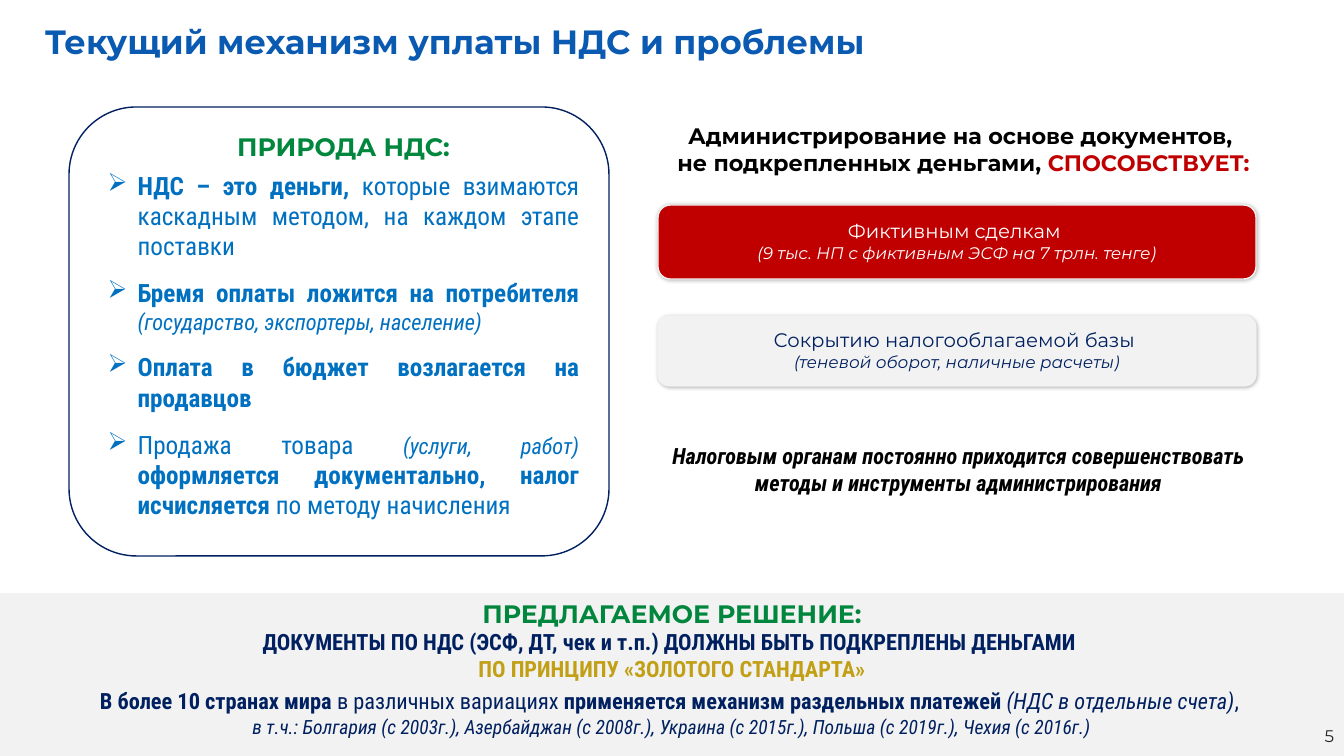
from lxml import etree
from pptx import Presentation
from pptx.dml.color import RGBColor
from pptx.enum.shapes import MSO_SHAPE
from pptx.enum.text import MSO_ANCHOR, PP_ALIGN
from pptx.oxml.ns import qn
from pptx.util import Pt

LEFT, MID, RIGHT, FULL = (PP_ALIGN.LEFT, PP_ALIGN.CENTER,
                          PP_ALIGN.RIGHT, PP_ALIGN.JUSTIFY)
TOP, CENTER = MSO_ANCHOR.TOP, MSO_ANCHOR.MIDDLE
RECT, ROUND = MSO_SHAPE.RECTANGLE, MSO_SHAPE.ROUNDED_RECTANGLE

PX = 914400 / 100.8
WIDE, HIGH = 1344, 756
MONT, ROBO = "Montserrat", "Roboto Condensed"
BLACK, WHITE, GREY, DARK = "000000", "FFFFFF", "F2F2F2", "262626"
NAVY, BLUE, SKY = "002060", "0B5AB2", "0070C0"
RED, GREEN, GOLD = "C00000", "00863D", "C1A015"

# Run style: font, size, colour, flags (b = bold, i = italic)
TITLE = (MONT, 24, BLUE, "b")
HEAD = (MONT, 18, GREEN, "b")
LEAD, ALERT = (MONT, 16, BLACK, "b"), (MONT, 16, RED, "b")
NOTE = (ROBO, 16, BLACK, "bi")
PAGE = (MONT, 12, DARK, "")
SKY_B, SKY_N, SKY_I = (ROBO, 18, SKY, "b"), (ROBO, 18, SKY, ""), (ROBO, 16, SKY, "i")
NAVY_B, NAVY_N, NAVY_I = (ROBO, 16, NAVY, "b"), (ROBO, 16, NAVY, ""), (ROBO, 16, NAVY, "i")
GOLD_B, SMALL_I = (ROBO, 16, GOLD, "b"), (ROBO, 14, NAVY, "i")

# Each text is a list of paragraphs, each paragraph a list of runs
HEADING = [[("Текущий механизм уплаты НДС и проблемы", TITLE)]]
CLAIM = [
    [("Администрирование на основе документов, ", LEAD)],
    [("не подкрепленных деньгами, ", LEAD), ("СПОСОБСТВУЕТ:", ALERT)],
]
EFFECTS = [  # top, height, fill, text colour, main line, detail
    (205, 74, RED, WHITE, "Фиктивным сделкам ",
     "(9 тыс. НП с фиктивным ЭСФ на 7 трлн. тенге)"),
    (316, 70, GREY, NAVY, "Сокрытию налогооблагаемой базы ",
     "(теневой оборот, наличные расчеты)"),
]
REMARK = [[("Налоговым органам постоянно приходится совершенствовать "
            "методы и инструменты администрирования", NOTE)]]
NATURE = [
    [("ПРИРОДА НДС:", HEAD)],
    [("НДС – это деньги, ", SKY_B),
     ("которые взимаются каскадным методом, на каждом этапе поставки", SKY_N)],
    [("Бремя оплаты ложится на потребителя ", SKY_B),
     ("(государство, экспортеры, население)", SKY_I)],
    [("Оплата в бюджет возлагается на продавцов", SKY_B)],
    [("Продажа товара ", SKY_N), ("(услуги, работ)", SKY_I), (" ", SKY_N),
     ("оформляется документально, налог исчисляется ", SKY_B),
     ("по методу начисления", SKY_N)],
]
ANSWER = [
    [("ПРЕДЛАГАЕМОЕ РЕШЕНИЕ:", HEAD)],
    [("ДОКУМЕНТЫ ПО НДС (ЭСФ, ДТ, чек и т.п.) ДОЛЖНЫ БЫТЬ ПОДКРЕПЛЕНЫ ДЕНЬГАМИ \n", NAVY_B),
     ("ПО ПРИНЦИПУ «ЗОЛОТОГО СТАНДАРТА»", GOLD_B)],
    [("В более 10 странах мира ", NAVY_B), ("в различных вариациях ", NAVY_N),
     ("применяется механизм раздельных платежей ", NAVY_B),
     ("(НДС в отдельные счета)", NAVY_I), (", \n", NAVY_N),
     ("в т.ч.: Болгария (с 2003г.), Азербайджан (с 2008г.), Украина (с 2015г.), "
      "Польша (с 2019г.), Чехия (с 2016г.)", SMALL_I)],
]


def px(n):
    return round(n * PX)


def color(code):
    return RGBColor.from_string(code)


def write(shape, paras, align, anchor=TOP):
    frame = shape.text_frame
    frame.word_wrap = True
    frame.vertical_anchor = anchor
    for i, runs in enumerate(paras):
        para = frame.paragraphs[0] if i == 0 else frame.add_paragraph()
        para.alignment = align
        for text, (face, size, ink, flags) in runs:
            run = para.add_run()
            run.text = text.rstrip("\n")
            font = run.font
            font.name, font.size = face, Pt(size)
            font.color.rgb = color(ink)
            font.bold, font.italic = "b" in flags, "i" in flags
            if text.endswith("\n"):
                para.add_line_break()
    return frame


def label(slide, box, paras, align, anchor=TOP):
    return write(slide.shapes.add_textbox(*map(px, box)), paras, align, anchor)


def block(slide, kind, box, fill=None, line=None):
    shape = slide.shapes.add_shape(kind, *map(px, box))
    shape.shadow.inherit = False
    if fill:
        shape.fill.solid()
        shape.fill.fore_color.rgb = color(fill)
    else:
        shape.fill.background()
    if line:
        shape.line.color.rgb = color(line)
        shape.line.width = Pt(1)
    else:
        shape.line.fill.background()
    return shape


def indent(para, left, first=0, mark=None):
    props = para._p.get_or_add_pPr()
    props.set("marL", str(px(left)))
    props.set("indent", str(px(first)))
    if mark:
        etree.SubElement(props, qn("a:buChar")).set("char", mark)


def glow(shape):
    """Add a soft shadow on all sides."""
    effects = shape._element.spPr.find(qn("a:effectLst"))
    outer = etree.SubElement(effects, qn("a:outerShdw"), blurRad=str(Pt(3)),
                             dist="0", dir="0", rotWithShape="0")
    ink = etree.SubElement(outer, qn("a:srgbClr"), val=BLACK)
    etree.SubElement(ink, qn("a:alpha"), val="29000")


def effect(slide, top, high, fill, ink, main, detail):
    shape = block(slide, ROUND, (658, top, 598, high), fill, GREY)
    glow(shape)
    lines = [[(main, (MONT, 14, ink, ""))], [(detail, (MONT, 12, ink, "i"))]]
    frame = write(shape, lines, MID, CENTER)
    frame.margin_left = frame.margin_right = px(25)
    frame.margin_top = frame.margin_bottom = px(22)
    for para in frame.paragraphs:
        para.line_spacing = Pt(15)


def nature(slide):
    shape = block(slide, ROUND, (69, 107, 540, 449), line=NAVY)
    shape.adjustments[0] = 0.15
    head, *points = write(shape, NATURE, FULL).paragraphs
    head.alignment = MID
    head.space_after = Pt(6)
    indent(head, 9)
    for point in points:
        point.space_after = Pt(12)
        indent(point, 39, -30, "➢")


def main():
    deck = Presentation()
    deck.slide_width, deck.slide_height = px(WIDE), px(HIGH)
    slide = deck.slides.add_slide(deck.slide_layouts[6])

    label(slide, (35, 16, 1099, 50), HEADING, LEFT)
    label(slide, (652, 117, 623, 65), CLAIM, MID)
    for row in EFFECTS:
        effect(slide, *row)
    remark = label(slide, (641, 437, 615, 92), REMARK, MID)
    indent(remark.paragraphs[0], 20)

    band = block(slide, RECT, (0, 593, WIDE, HIGH - 593), GREY)
    answer = write(band, ANSWER, MID)
    answer.paragraphs[1].space_after = Pt(4)
    nature(slide)
    label(slide, (1251, 716, 93, 40), [[("5", PAGE)]], RIGHT, CENTER)
    deck.save("out.pptx")


if __name__ == "__main__":
    main()
